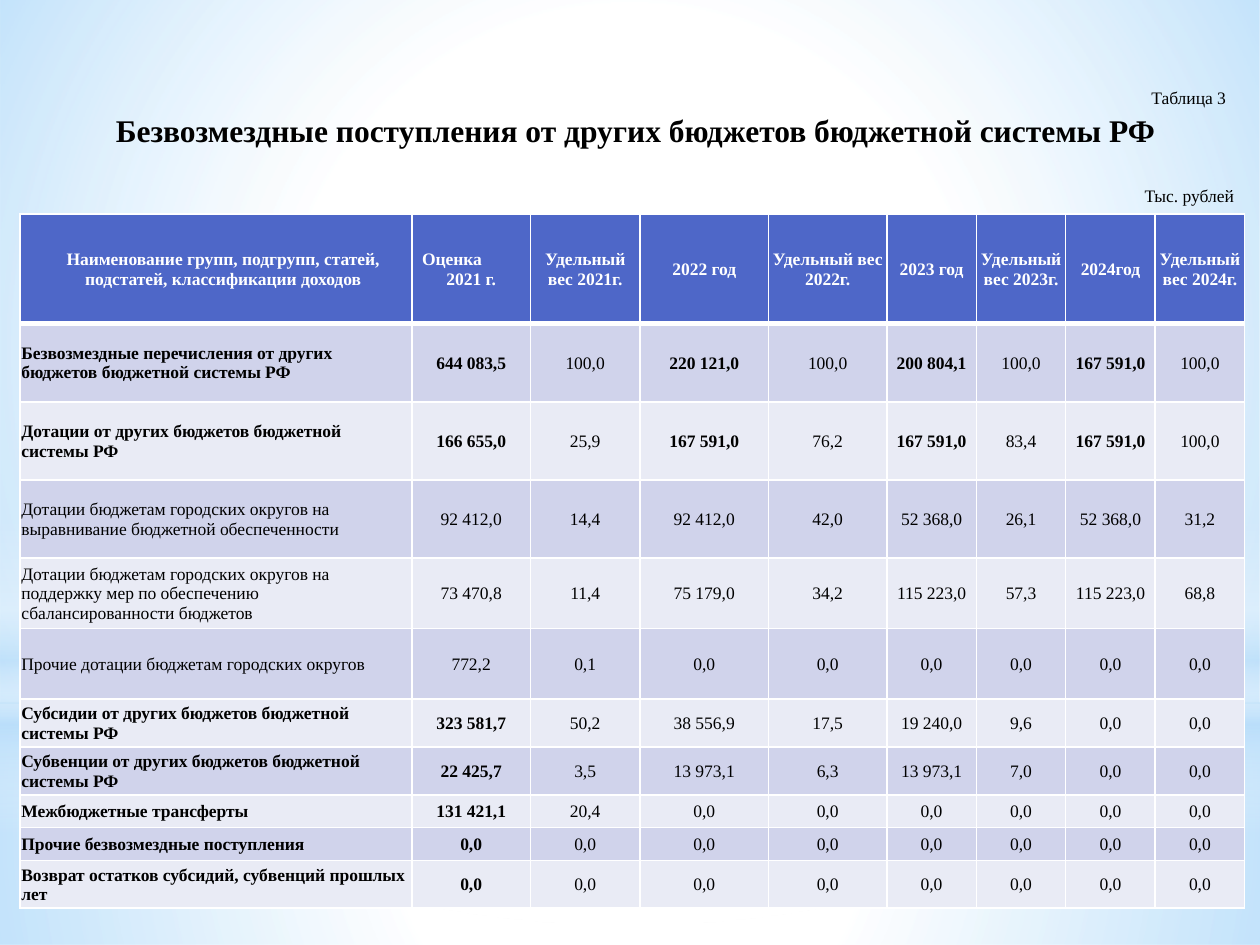
from lxml import etree
from pptx import Presentation
from pptx.dml.color import RGBColor
from pptx.enum.shapes import MSO_SHAPE as Preset
from pptx.enum.text import MSO_ANCHOR as Anchor, PP_ALIGN as Align
from pptx.oxml import parse_xml
from pptx.oxml.ns import nsdecls, qn
from pptx.util import Inches, Pt

COLORS = {"white": "FFFFFF", "sky": "B4DCFA", "black": "000000",
          "header": "4E67C8", "band_dark": "D0D3EB", "band_light": "E9EBF5"}
FONT = "Times New Roman"

# The slide is a grid of 10 columns by 7.5 rows
GRID_COLUMNS, GRID_ROWS = 10, 7.5
SLIDE_WIDTH, SLIDE_HEIGHT = Inches(10), Inches(7.5)
COLUMN, ROW = SLIDE_WIDTH / GRID_COLUMNS, SLIDE_HEIGHT / GRID_ROWS

CIRCLE = ('<a:path path="circle"><a:fillToRect l="50000" t="50000" '
          'r="50000" b="50000"/></a:path>')
VERTICAL = '<a:lin ang="5400000" scaled="0"/>'

# Preset, box, direction, stops of (position %, colour, opacity %)
BACKDROP = [
    (Preset.RECTANGLE, (0, 5.58, 10, 1.92), CIRCLE,
     [(0, "white", 91), (37, "white", 76), (100, "sky", 79)]),
    (Preset.RECTANGLE, (0, 0, 10, 5.58), CIRCLE,
     [(0, "white", 89), (48, "white", 62), (100, "sky", 79)]),
    (Preset.RECTANGLE, (0, 4.12, 10, 2.5), VERTICAL,
     [(0, "white", 0), (29, "white", 30), (45, "sky", 40),
      (55, "white", 26), (65, "sky", 60), (100, "white", 0)]),
    (Preset.OVAL, (0, 1.75, 10, 5.58), CIRCLE,
     [(0, "white", 100), (56, "white", 0)]),
]

COLUMN_WIDTHS = [3.11, 0.94, 0.87, 1.02, 0.94] + [0.71] * 4
ROW_HEIGHTS = [0.87] + [0.62] * 3 + [0.56] * 2 + [0.38] * 2 + [0.26] * 2 + [0.38]
HEADER = ["Наименование групп, подгрупп, статей, подстатей, классификации доходов",
          "Оценка\n2021 г.", "Удельный вес 2021г.", "2022 год",
          "Удельный вес 2022г.", "2023 год", "Удельный вес 2023г.",
          "2024год", "Удельный вес 2024г."]

# Bold columns for each kind of row
TOTAL, DETAIL, GROUP = {0, 1, 3, 5, 7}, set(), {0, 1}
ZERO = "0,0"
BODY = [
    (TOTAL, "Безвозмездные перечисления от других бюджетов бюджетной системы РФ",
     ["644 083,5", "100,0", "220 121,0", "100,0", "200 804,1", "100,0",
      "167 591,0", "100,0"]),
    (TOTAL, "Дотации от других бюджетов бюджетной системы РФ",
     ["166 655,0", "25,9", "167 591,0", "76,2", "167 591,0", "83,4",
      "167 591,0", "100,0"]),
    (DETAIL, "Дотации бюджетам городских округов на выравнивание "
     "бюджетной обеспеченности",
     ["92 412,0", "14,4", "92 412,0", "42,0", "52 368,0", "26,1",
      "52 368,0", "31,2"]),
    (DETAIL, "Дотации бюджетам городских округов на поддержку мер по "
     "обеспечению сбалансированности бюджетов",
     ["73 470,8", "11,4", "75 179,0", "34,2", "115 223,0", "57,3",
      "115 223,0", "68,8"]),
    (DETAIL, "Прочие дотации бюджетам городских округов",
     ["772,2", "0,1"] + [ZERO] * 6),
    (GROUP, "Субсидии от других бюджетов бюджетной системы РФ",
     ["323 581,7", "50,2", "38 556,9", "17,5", "19 240,0", "9,6", ZERO, ZERO]),
    (GROUP, "Субвенции от других бюджетов бюджетной системы РФ",
     ["22 425,7", "3,5", "13 973,1", "6,3", "13 973,1", "7,0", ZERO, ZERO]),
    (GROUP, "Межбюджетные трансферты", ["131 421,1", "20,4"] + [ZERO] * 6),
    (GROUP, "Прочие безвозмездные поступления", [ZERO] * 8),
    (GROUP, "Возврат остатков субсидий, субвенций прошлых лет", [ZERO] * 8),
]


def color(name):
    return RGBColor.from_string(COLORS[name])


def place(box):
    left, top, width, height = box
    return [round(left * COLUMN), round(top * ROW),
            round(width * COLUMN), round(height * ROW)]


def set_attributes(target, values):
    for name, value in values.items():
        setattr(target, name, value)


def format_font(font, size=10, bold=False, color_name="black"):
    set_attributes(font, {"name": FONT, "size": Pt(size), "bold": bold})
    font.color.rgb = color(color_name)


def add_gradient_shape(slide, preset, box, direction, stops):
    shape = slide.shapes.add_shape(preset, *place(box))
    shape.shadow.inherit = False
    shape.line.fill.background()
    stop_list = "".join(
        f'<a:gs pos="{position * 1000}"><a:srgbClr val="{COLORS[name]}">'
        f'<a:alpha val="{opacity * 1000}"/></a:srgbClr></a:gs>'
        for position, name, opacity in stops)
    gradient = parse_xml(f'<a:gradFill {nsdecls("a")} rotWithShape="1">'
                         f'<a:gsLst>{stop_list}</a:gsLst>{direction}</a:gradFill>')
    shape.element.spPr.find(qn("a:prstGeom")).addnext(gradient)


def add_heading(slide, box):
    frame = slide.shapes.add_textbox(*place(box)).text_frame
    frame.word_wrap = True
    # Alignment, space before, runs of (text, size, bold)
    lines = [
        (Align.RIGHT, 0, [("Таблица 3", 10, False), (" ", 18, False)]),
        (Align.CENTER, 0, [("Безвозмездные поступления от других бюджетов "
                            "бюджетной системы РФ", 18, True)]),
        (Align.RIGHT, 21, [("Тыс. рублей", 10, False)]),
    ]
    for index, (alignment, gap, runs) in enumerate(lines):
        paragraph = frame.add_paragraph() if index else frame.paragraphs[0]
        set_attributes(paragraph, {"alignment": alignment, "space_before": Pt(gap)})
        for text, size, bold in runs:
            run = paragraph.add_run()
            run.text = text
            format_font(run.font, size, bold)


def add_borders(cell, bottom_width):
    properties = cell._tc.get_or_add_tcPr()
    for side, width in zip("LRTB", (1, 1, 1, bottom_width)):
        line = etree.SubElement(properties, qn(f"a:ln{side}"), w=str(Pt(width)))
        fill = etree.SubElement(line, qn("a:solidFill"))
        etree.SubElement(fill, qn("a:srgbClr"), val=COLORS["white"])


def fill_cell(cell, text, fill_name, alignment, bold, is_header):
    set_attributes(cell, {
        "text": text, "vertical_anchor": Anchor.MIDDLE,
        "margin_left": Inches(0.01), "margin_top": Inches(0.01),
        "margin_right": Inches(0.01), "margin_bottom": 0})
    add_borders(cell, 3 if is_header else 1)
    cell.fill.solid()
    cell.fill.fore_color.rgb = color(fill_name)
    for paragraph in cell.text_frame.paragraphs:
        paragraph.alignment = alignment
        format_font(paragraph.runs[0].font, 10, bold,
                    "white" if is_header else "black")


def add_budget_table(slide, box):
    rows = [(set(range(len(HEADER))), HEADER)]
    rows += [(bold, [name] + values) for bold, name, values in BODY]
    table = slide.shapes.add_table(len(rows), len(HEADER), *place(box)).table
    for column, width in zip(table.columns, COLUMN_WIDTHS):
        column.width = round(width * COLUMN)
    for row, height in zip(table.rows, ROW_HEIGHTS):
        row.height = round(height * ROW)
    for row_index, (bold_columns, texts) in enumerate(rows):
        is_header = row_index == 0
        band = "band_dark" if row_index % 2 else "band_light"
        for column_index, text in enumerate(texts):
            is_name = column_index == 0 and not is_header
            fill_cell(table.cell(row_index, column_index), text,
                      "header" if is_header else band,
                      Align.LEFT if is_name else Align.CENTER,
                      column_index in bold_columns, is_header)
    # Header exceptions: indented name column, first word set to the left
    table.cell(0, 0).margin_left = Inches(0.12)
    estimate = table.cell(0, 1).text_frame.paragraphs[0]
    estimate.alignment = Align.LEFT
    estimate._p.get_or_add_pPr().set("marL", str(Inches(0.07)))


def main():
    presentation = Presentation()
    set_attributes(presentation, {"slide_width": SLIDE_WIDTH,
                                  "slide_height": SLIDE_HEIGHT})
    slide = presentation.slides.add_slide(presentation.slide_layouts[6])
    slide.background.fill.solid()
    slide.background.fill.fore_color.rgb = color("white")
    for preset, box, direction, stops in BACKDROP:
        add_gradient_shape(slide, preset, box, direction, stops)
    add_heading(slide, (0.2, 0.53, 9.69, 1.17))
    add_budget_table(slide, (0.16, 1.7, 9.72, 5.51))
    presentation.save("out.pptx")


if __name__ == "__main__":
    main()
